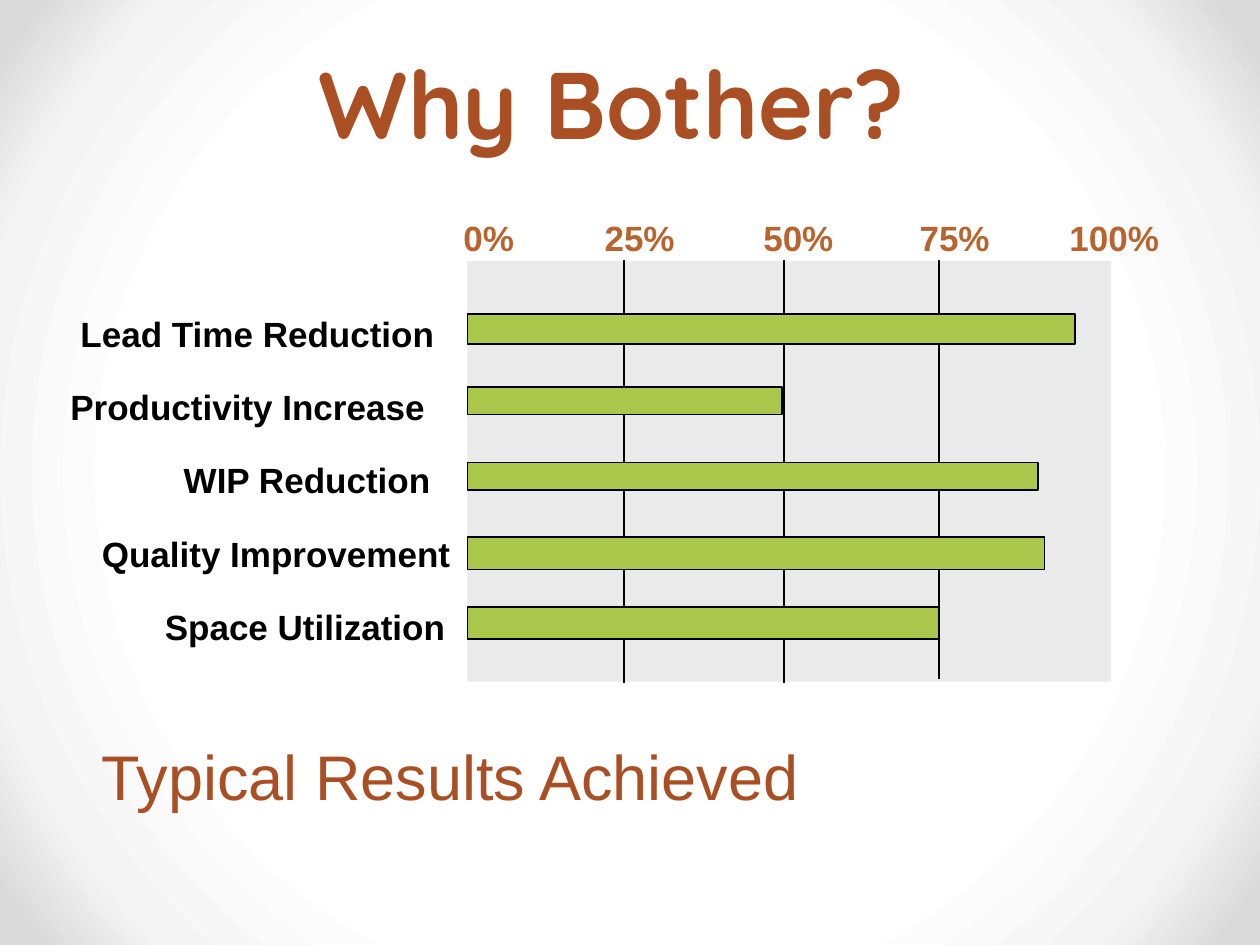
from lxml import etree
from pptx import Presentation
from pptx.dml.color import RGBColor
from pptx.enum.shapes import MSO_CONNECTOR, MSO_SHAPE
from pptx.enum.text import MSO_ANCHOR, PP_ALIGN
from pptx.oxml import parse_xml
from pptx.oxml.ns import nsdecls, qn
from pptx.util import Inches, Pt

RECT = MSO_SHAPE.RECTANGLE
LINE = MSO_CONNECTOR.STRAIGHT
TOP, BOTTOM = MSO_ANCHOR.TOP, MSO_ANCHOR.BOTTOM
LEFT, CENTER = PP_ALIGN.LEFT, PP_ALIGN.CENTER

COLORS = {
    "title": "AA4F24",
    "scale": "B9632F",
    "label": "000000",
    "plot": "EAEAEA",
    "bar": "AAC64B",
    "line": "000000",
}
GLOW = [(64, "FFFFFF"), (84, "F4F4F4"), (96, "DADADA")]

AXIS = 3.71  # left edge of the plot and of every bar
TICKS = [1.12, 2.38, 3.62, 4.81]
GRID = [(4.95, 5.42), (6.22, 5.42), (7.45, 5.39)]  # x, lower end

# label, its left and width, then bar top, width and height
ROWS = [
    ("Lead Time Reduction", 0.54, 3.52, 2.49, 4.82, 0.24),
    ("Productivity Increase", 0.46, 3.04, 3.07, 2.5, 0.22),
    ("WIP Reduction", 1.36, 2.26, 3.67, 4.53, 0.22),
    ("Quality Improvement", 0.71, 3.08, 4.26, 4.58, 0.26),
    ("Space Utilization", 1.21, 2.5, 4.82, 3.74, 0.25),
]


def color(name):
    return RGBColor.from_string(COLORS[name])


def add_glow(slide):
    """Fill the background with a round gradient."""
    stops = "".join(
        f'<a:gs pos="{pos * 1000}"><a:srgbClr val="{tone}"/></a:gs>'
        for pos, tone in GLOW
    )
    grad = parse_xml(
        f'<a:gradFill {nsdecls("a")} rotWithShape="1"><a:gsLst>{stops}</a:gsLst>'
        '<a:path path="circle"><a:fillToRect l="50000" t="50000" r="50000" '
        'b="50000"/></a:path></a:gradFill>'
    )
    slide.background.fill.solid()
    props = slide.element.find(".//" + qn("p:bgPr"))
    props.replace(props.find(qn("a:solidFill")), grad)


def add_text(slide, text, x, y, w, h, size=20, font="Arial", tone="label",
             bold=True, align=LEFT, anchor=TOP, space=None, tabs=()):
    frame = slide.shapes.add_textbox(
        Inches(x), Inches(y), Inches(w), Inches(h)).text_frame
    frame.word_wrap = True
    frame.vertical_anchor = anchor
    para = frame.paragraphs[0]
    para.alignment = align
    if space:
        para.line_spacing = space
    if tabs:
        stops = etree.SubElement(para._p.get_or_add_pPr(), qn("a:tabLst"))
        for pos in tabs:
            etree.SubElement(stops, qn("a:tab"), pos=str(Inches(pos)), algn="l")
    run = para.add_run()
    run.text = text
    run.font.name = font
    run.font.size = Pt(size)
    run.font.bold = bold
    run.font.color.rgb = color(tone)


def add_box(slide, x, y, w, h, fill, edge=None):
    box = slide.shapes.add_shape(RECT, Inches(x), Inches(y), Inches(w), Inches(h))
    box.shadow.inherit = False
    box.fill.solid()
    box.fill.fore_color.rgb = color(fill)
    if edge:
        box.line.color.rgb = color(edge)
        box.line.width = Pt(1)
    else:
        box.line.fill.background()


def add_rule(slide, x, top, end):
    rule = slide.shapes.add_connector(
        LINE, Inches(x), Inches(top), Inches(x), Inches(end))
    rule.line.color.rgb = color("line")
    rule.line.width = Pt(1)
    etree.SubElement(rule._element.spPr, qn("a:effectLst"))


def main():
    deck = Presentation()
    deck.slide_width, deck.slide_height = Inches(10), Inches(7.5)
    slide = deck.slides.add_slide(deck.slide_layouts[6])
    add_glow(slide)

    # Title
    add_text(slide, "Why Bother? ", 0.46, 0.24, 9, 1.07, size=54,
             font="Quicksand", tone="title", align=CENTER, anchor=BOTTOM,
             space=Pt(58))

    # Plot area with grid and scale
    add_box(slide, AXIS, 2.07, 5.11, 3.34, "plot")
    for x, end in GRID:
        add_rule(slide, x, 2.06, end)
    add_text(slide, "0%\t25%\t50%\t75%\t100%", 3.58, 1.67, 5.87, 0.44,
             tone="scale", tabs=TICKS)

    # Labels and bars
    for i, (label, x, wide, top, length, thick) in enumerate(ROWS):
        add_text(slide, label, x, 2.3 + 0.58 * i, wide, 0.56, space=1.4)
        add_box(slide, AXIS, top, length, thick, "bar", "line")

    # Closing line
    add_text(slide, "Typical Results Achieved", 0.71, 5.48, 8.11, 1.02,
             size=36, tone="title", bold=False, anchor=BOTTOM)

    deck.save("out.pptx")


if __name__ == "__main__":
    main()
